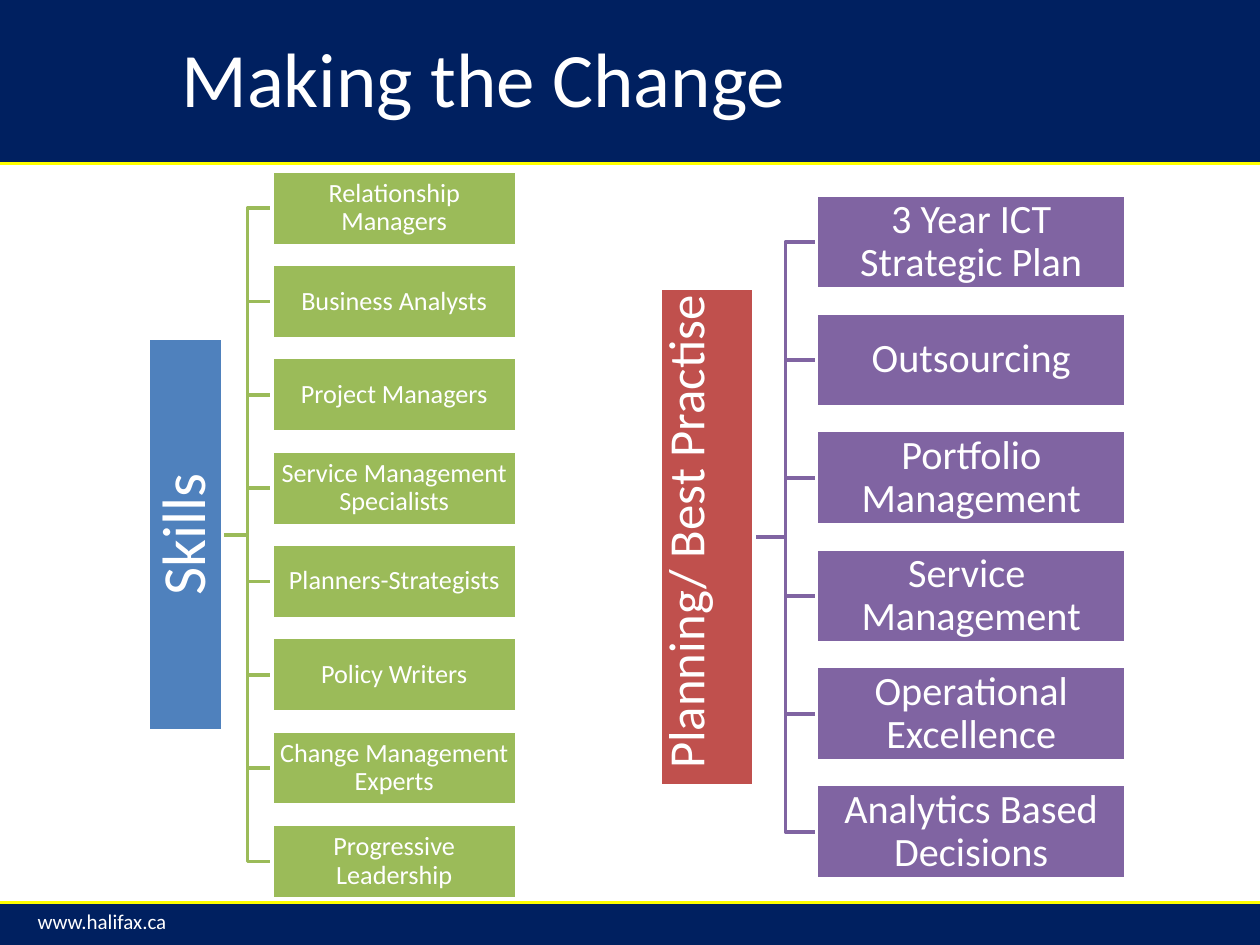
import pptx
import pptx.util
from dataclasses import dataclass
from pptx.dml.color import RGBColor
from pptx.enum.shapes import MSO_CONNECTOR, MSO_SHAPE
from pptx.enum.text import MSO_ANCHOR, PP_ALIGN
from lxml import etree

Pt = pptx.util.Pt
WIDTH, HEIGHT = 720, 540


@dataclass(frozen=True)
class Theme:
    font: str = "Calibri"
    navy: str = "002060"
    yellow: str = "FFFF00"
    white: str = "FFFFFF"
    blue: str = "4F81BD"
    green: str = "9BBB59"
    red: str = "C0504D"
    purple: str = "8064A2"
    title_size: float = 44
    footer_size: float = 12
    line_width: float = 2


THEME = Theme()


@dataclass(frozen=True)
class TreeStyle:
    root_color: str
    branch_color: str
    root_size: float
    branch_size: float
    root_length: float
    node_height: float
    branch_width: float
    root_insets: tuple = (1.4, 1.4, 1.4, 1.4)  # left, top, right, bottom


def color(value):
    return RGBColor.from_string(value)


def set_text(shape, text, size, insets, align=PP_ALIGN.LEFT,
             anchor=MSO_ANCHOR.MIDDLE, spacing=1.0):
    frame = shape.text_frame
    frame.word_wrap = True
    frame.vertical_anchor = anchor
    (frame.margin_left, frame.margin_top,
     frame.margin_right, frame.margin_bottom) = map(Pt, insets)
    frame.text = text
    paragraph = frame.paragraphs[0]
    paragraph.alignment = align
    paragraph.line_spacing = spacing
    for run in paragraph.runs:
        run.font.name = THEME.font
        run.font.size = Pt(size)
        run.font.color.rgb = color(THEME.white)


def add_rectangle(slide, left, top, width, height, fill, outline=None):
    shape = slide.shapes.add_shape(MSO_SHAPE.RECTANGLE, Pt(left), Pt(top), Pt(width), Pt(height))
    shape.shadow.inherit = False
    shape.fill.solid()
    shape.fill.fore_color.rgb = color(fill)
    if outline:
        shape.line.color.rgb = color(outline)
        shape.line.width = Pt(THEME.line_width)
    else:
        shape.line.fill.background()
    return shape


def add_rule(slide, top):
    rule = slide.shapes.add_connector(MSO_CONNECTOR.STRAIGHT, 0, Pt(top), Pt(WIDTH), Pt(top))
    rule.line.color.rgb = color(THEME.yellow)
    rule.line.width = Pt(THEME.line_width)
    etree.SubElement(rule._element.spPr, pptx.oxml.ns.qn("a:effectLst"))


def add_label(slide, left, top, width, height, text, size):
    label = slide.shapes.add_textbox(Pt(left), Pt(top), Pt(width), Pt(height))
    set_text(label, text, size, (7.2, 3.6, 7.2, 3.6))


def add_header(slide, left, top, width, height, title):
    add_rectangle(slide, left, top, width, height, THEME.navy)
    add_rule(slide, top + height)
    add_label(slide, left + 96.5, top + 6.8, 576.5, 74.2, title, THEME.title_size)


def add_footer(slide, left, top, width, height, address):
    add_rectangle(slide, left, top, width, height, THEME.navy)
    add_rule(slide, top)
    add_label(slide, left + 14.4, top - 0.3, 114.5, 21.8, address, THEME.footer_size)


def add_elbow(slide, start_x, start_y, end_x, end_y, line_color):
    middle = (start_x + end_x) / 2
    builder = slide.shapes.build_freeform(Pt(start_x), Pt(start_y))
    corners = [(middle, start_y), (middle, end_y), (end_x, end_y)]
    builder.add_line_segments([(Pt(x), Pt(y)) for x, y in corners], close=False)
    elbow = builder.convert_to_shape()
    elbow.shadow.inherit = False
    elbow.fill.background()
    elbow.line.color.rgb = color(line_color)
    elbow.line.width = Pt(THEME.line_width)


def add_tree(slide, left, top, width, height, root, branches, style):
    """A sideways root box joined to a column of evenly spaced branches."""
    node = style.node_height
    pitch = (height - node) / (len(branches) - 1)
    branch_left = left + width - style.branch_width
    middle = top + height / 2
    tops = [top + index * pitch for index in range(len(branches))]

    # Elbows lie behind the boxes
    for branch_top in tops:
        add_elbow(slide, left + node, middle, branch_left, branch_top + node / 2,
                  style.branch_color)

    # Root, turned to read upwards
    length = style.root_length
    box = add_rectangle(slide, left + (node - length) / 2, middle - node / 2,
                        length, node, style.root_color, THEME.white)
    box.rotation = 270
    set_text(box, root, style.root_size, style.root_insets, PP_ALIGN.CENTER, spacing=0.9)

    # Branches
    for text, branch_top in zip(branches, tops):
        box = add_rectangle(slide, branch_left, branch_top, style.branch_width, node,
                            style.branch_color, THEME.white)
        set_text(box, text, style.branch_size, (1, 1, 1, 1), PP_ALIGN.CENTER, spacing=0.9)


def main():
    presentation = pptx.Presentation()
    presentation.slide_width, presentation.slide_height = Pt(WIDTH), Pt(HEIGHT)
    slide = presentation.slides.add_slide(presentation.slide_layouts[6])

    add_header(slide, 0, 0, WIDTH, 93.5, "Making the Change")
    add_footer(slide, 0, 515.8, WIDTH, 24.2, "www.halifax.ca")

    skills = ["Relationship Managers", "Business Analysts", "Project Managers",
              "Service Management Specialists", "Planners-Strategists",
              "Policy Writers", "Change Management Experts", "Progressive Leadership"]
    add_tree(slide, 84.7, 97.7, 210.5, 415.8, "Skills", skills,
             TreeStyle(THEME.blue, THEME.green, 35, 15, 224.4, 42.6, 139.8))

    practices = ["3 Year ICT Strategic Plan", "Outsourcing", "Portfolio Management",
                 "Service \vManagement", "Operational Excellence",
                 "Analytics Based Decisions"]
    add_tree(slide, 377.1, 111.3, 266.5, 391, "Planning/ Best Practise", practices,
             TreeStyle(THEME.red, THEME.purple, 29, 23, 284, 53.9, 177,
                       root_insets=(7, 0, 1.4, 22)))

    presentation.save("out.pptx")


if __name__ == "__main__":
    main()
